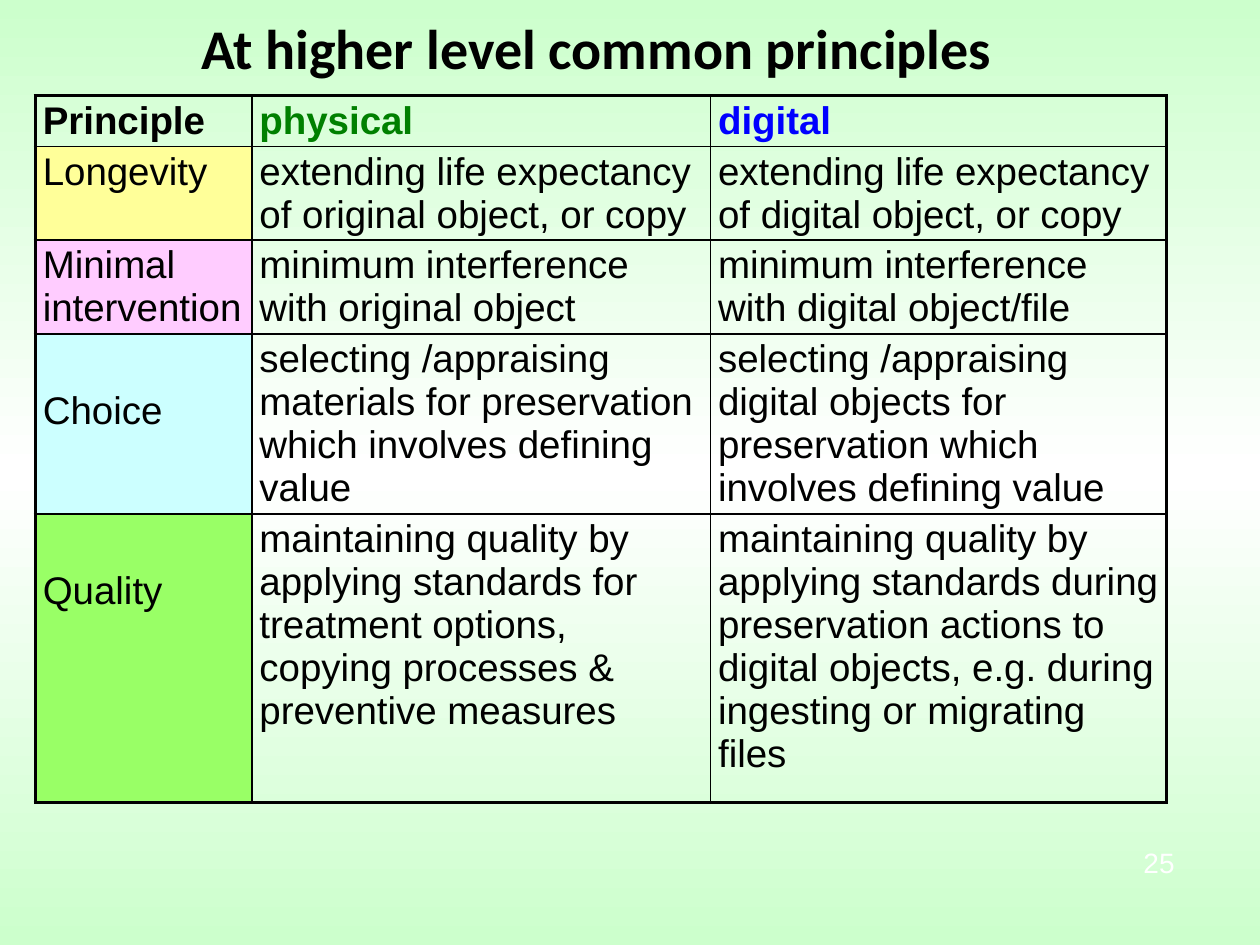
from copy import deepcopy

from lxml.etree import SubElement
from pptx import Presentation
from pptx.dml.color import RGBColor
from pptx.enum.text import MSO_ANCHOR, PP_ALIGN
from pptx.oxml.ns import qn
from pptx.util import Inches, Pt

COLUMN_WIDTHS = [1.72, 3.64, 3.62]
ROW_HEIGHTS = [0.4, 0.74, 0.74, 1.43, 2.29]
HEADINGS = [("Principle", "000000"), ("physical", "008000"), ("digital", "0000FF")]
# Name, fill, top margin of the name, physical, digital
PRINCIPLES = [
    ("Longevity", "FFFF99", 0.03,
     "extending life expectancy of original object, or copy",
     "extending life expectancy of digital object, or copy"),
    ("Minimal intervention", "FFCCFF", 0.03,
     "minimum interference with original object",
     "minimum interference with digital object/file"),
    ("Choice", "CCFFFF", 0.44,
     "selecting /appraising materials for preservation which involves defining value",
     "selecting /appraising digital objects for preservation which involves defining value"),
    ("Quality", "99FF66", 0.44,
     "maintaining quality by applying standards for treatment options, "
     "copying processes & preventive measures",
     "maintaining quality by applying standards during preservation actions to "
     "digital objects, e.g. during ingesting or migrating files"),
]


def color(value):
    return RGBColor.from_string(value)


class SlideBuilder:
    heading_font = "Calibri"
    body_font = "Arial"
    ink = "000000"
    thin, thick = 1, 2.25

    def __init__(self, page):
        self.page = page

    def style(self, para, size, ink=None, bold=False, font=None):
        para.font.name = font or self.body_font
        para.font.size = Pt(size)
        para.font.bold = bold
        para.font.color.rgb = color(ink or self.ink)

    def background(self, edge, middle):
        fill = self.page.background.fill
        fill.gradient()
        fill.gradient_angle = 90
        first, last = fill.gradient_stops
        for stop, position in ((first, 0), (last, 1)):
            stop.color.rgb = color(edge)
            stop.position = position
        stops = self.page.background._cSld.find(".//" + qn("a:gsLst"))
        center = deepcopy(stops[0])
        center.set("pos", "50000")
        center.find(qn("a:srgbClr")).set("val", middle)
        stops.insert(1, center)

    def title(self, text, left, top, width, height):
        box = self.page.shapes.title
        box.left, box.top = Inches(left), Inches(top)
        box.width, box.height = Inches(width), Inches(height)
        box.text_frame.text = text
        box.text_frame.vertical_anchor = MSO_ANCHOR.MIDDLE
        para = box.text_frame.paragraphs[0]
        para.alignment = PP_ALIGN.CENTER
        self.style(para, 32, bold=True, font=self.heading_font)

    def page_number(self, text, left, top, width, height):
        box = self.page.shapes.add_textbox(
            Inches(left), Inches(top), Inches(width), Inches(height))
        frame = box.text_frame
        frame.word_wrap = True
        frame.vertical_anchor = MSO_ANCHOR.MIDDLE
        frame.text = text
        para = frame.paragraphs[0]
        para.alignment = PP_ALIGN.RIGHT
        self.style(para, 16, "FFFFFF")

    def table(self, left, top, column_widths, row_heights):
        frame = self.page.shapes.add_table(
            len(row_heights), len(column_widths), Inches(left), Inches(top),
            Inches(sum(column_widths)), Inches(sum(row_heights)))
        table = frame.table
        table.first_row = table.horz_banding = False
        for column, width in zip(table.columns, column_widths):
            column.width = Inches(width)
        for row, height in zip(table.rows, row_heights):
            row.height = Inches(height)
        return table

    def borders(self, table, row, column):
        """Draw thick lines on the outer edge of the table and thin ones inside."""
        outer_edges = {
            "a:lnL": column == 0,
            "a:lnR": column == len(table.columns) - 1,
            "a:lnT": row == 0,
            "a:lnB": row == len(table.rows) - 1,
        }
        properties = table.cell(row, column)._tc.get_or_add_tcPr()
        for tag, outer in outer_edges.items():
            weight = Pt(self.thick if outer else self.thin)
            line = SubElement(properties, qn(tag), w=str(weight))
            fill = SubElement(line, qn("a:solidFill"))
            SubElement(fill, qn("a:srgbClr"), val=self.ink)

    def cell(self, table, row, column, text, ink=None, bold=False, fill=None,
             margin_top=0.03):
        cell = table.cell(row, column)
        cell.margin_left = cell.margin_right = Inches(0.06)
        cell.margin_top, cell.margin_bottom = Inches(margin_top), Inches(0.03)
        cell.text = text
        self.style(cell.text_frame.paragraphs[0], 22, ink, bold)
        self.borders(table, row, column)
        if fill:
            cell.fill.solid()
            cell.fill.fore_color.rgb = color(fill)
        else:
            cell.fill.background()


def main():
    deck = Presentation()
    deck.slide_width, deck.slide_height = Inches(10), Inches(7.5)
    title_only = deck.slide_layouts[5]
    builder = SlideBuilder(deck.slides.add_slide(title_only))

    builder.background("CCFFCC", "FFFFFF")
    builder.title("At higher level common principles", 0.22, 0.02, 9.03, 0.71)
    table = builder.table(0.28, 0.76, COLUMN_WIDTHS, ROW_HEIGHTS)
    for column, (heading, ink) in enumerate(HEADINGS):
        builder.cell(table, 0, column, heading, ink, bold=True)
    for row, (name, fill, margin_top, physical, digital) in enumerate(PRINCIPLES, 1):
        builder.cell(table, row, 0, name, fill=fill, margin_top=margin_top)
        builder.cell(table, row, 1, physical)
        builder.cell(table, row, 2, digital)
    builder.page_number("25", 8.42, 6.64, 1, 0.4)

    deck.save("out.pptx")


if __name__ == "__main__":
    main()
